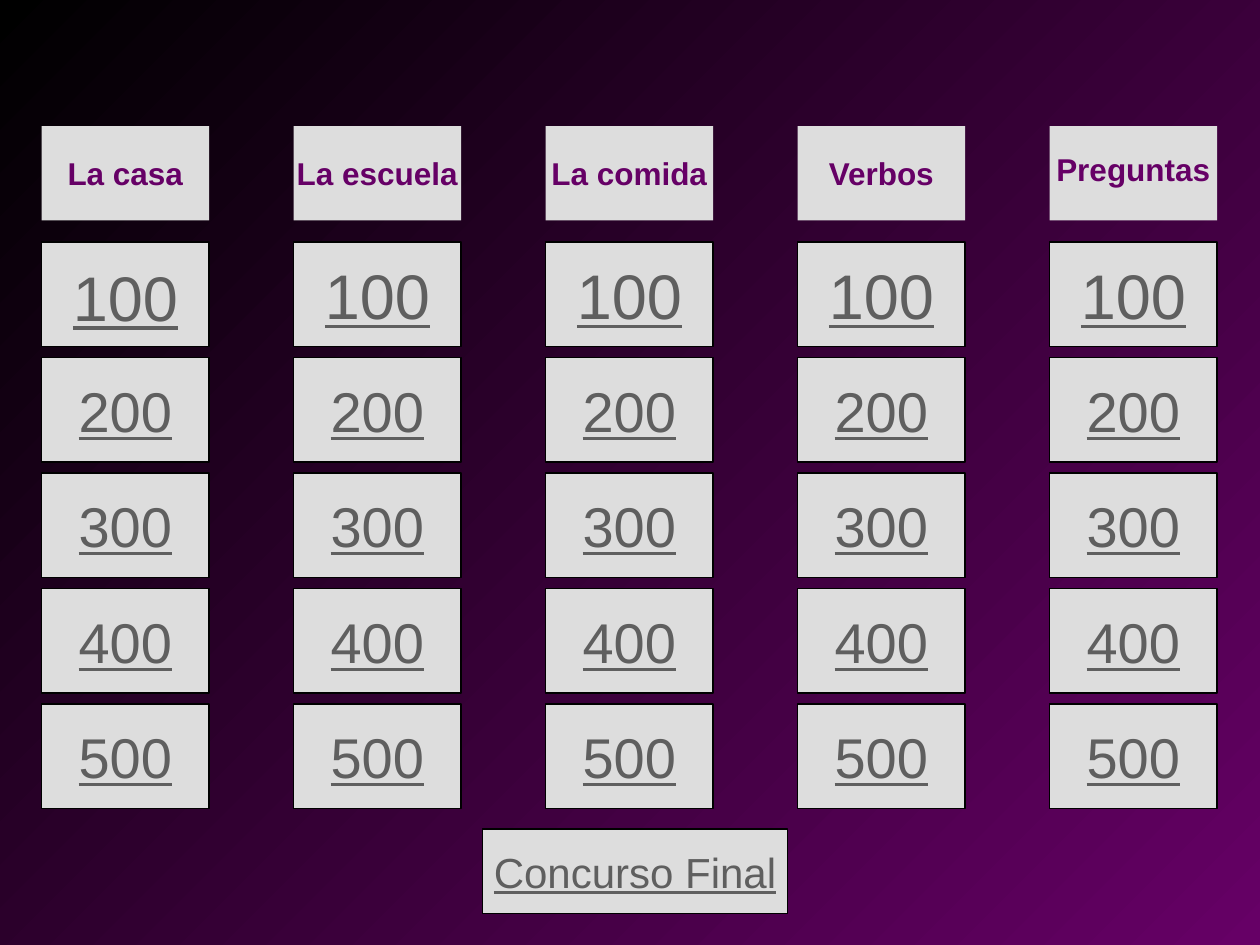
from lxml import etree
from pptx import Presentation, util as u
from pptx.dml.color import RGBColor
from pptx.enum import shapes, text
from pptx.oxml.ns import qn

CATEGORIES = ["La casa", "La escuela", "La comida", "Verbos", "Preguntas"]
POINTS = [("100", 36), ("200", 32), ("300", 32), ("400", 32), ("500", 32)]
FINAL = "Concurso Final"

PURPLE, BLACK, TILE, LINK = "660066", "000000", "DDDDDD", "5F5F5F"
LEFT, COLUMN_STEP, TILE_WIDTH = 0.33, 2, 1.33
HEADER_TOP, HEADER_HEIGHT = 1, 0.75
TILE_TOP, ROW_STEP, TILE_HEIGHT = 1.92, 0.917, 0.83
BUTTON = shapes.MSO_SHAPE.ACTION_BUTTON_CUSTOM
HEADER = shapes.MSO_SHAPE.RECTANGLE


def color(value):
    return RGBColor.from_string(value)


def paint_background(page):
    fill = page.background.fill
    fill.gradient()
    for stop, value, position in zip(fill.gradient_stops, (PURPLE, BLACK), (0, 1)):
        stop.color.rgb = color(value)
        stop.position = position
    gradient = page.element.find(".//" + qn("a:gradFill"))
    gradient.remove(gradient.find(qn("a:lin")))
    circle = etree.SubElement(gradient, qn("a:path"), path="circle")
    etree.SubElement(circle, qn("a:fillToRect"), l="100000", t="100000")


def add_tile(page, kind, *place):
    tile = page.shapes.add_shape(kind, *map(u.Inches, place))
    tile.shadow.inherit = False
    tile.fill.solid()
    tile.fill.fore_color.rgb = color(TILE)
    if kind == BUTTON:
        tile.line.color.rgb = color(BLACK)
        tile.line.width = u.Pt(0.75)
    else:
        tile.line.fill.background()
    return tile


def write(box, words, size, is_header=False, anchor=text.MSO_ANCHOR.MIDDLE):
    frame = box.text_frame
    frame.word_wrap = False
    frame.vertical_anchor = anchor
    para = frame.paragraphs[0]
    para.text = words
    para.alignment = text.PP_ALIGN.CENTER
    font = para.font
    font.name, font.size = "Arial", u.Pt(size)
    font.bold, font.underline = is_header, not is_header
    font.color.rgb = color(PURPLE if is_header else LINK)
    return para


def add_caption(page, top, height, *content):
    box = page.shapes.add_textbox(*map(u.Inches, (LEFT, top, TILE_WIDTH, height)))
    write(box, *content, anchor=text.MSO_ANCHOR.TOP)


def main():
    deck = Presentation()
    deck.slide_width, deck.slide_height = u.Inches(10), u.Inches(7.5)
    page = deck.slides.add_slide(deck.slide_layouts[6])
    paint_background(page)

    final = add_tile(page, BUTTON, 3.83, 6.58, 2.42, 0.67)
    write(final, FINAL, 24)

    for column, category in enumerate(CATEGORIES):
        left = LEFT + column * COLUMN_STEP
        header = add_tile(page, HEADER, left, HEADER_TOP, TILE_WIDTH, HEADER_HEIGHT)
        if column == 0:
            add_caption(page, 1.17, 0.4, category, 18, True)
        else:
            para = write(header, category, 18, True)
            if category == "Preguntas":
                para.line_spacing = 0.75
        for row, (points, size) in enumerate(POINTS):
            top = TILE_TOP + row * ROW_STEP
            tile = add_tile(page, BUTTON, left, top, TILE_WIDTH, TILE_HEIGHT)
            if column == row == 0:
                add_caption(page, 2, 0.7, points, size)
            else:
                write(tile, points, size)

    deck.save("out.pptx")


if __name__ == "__main__":
    main()
